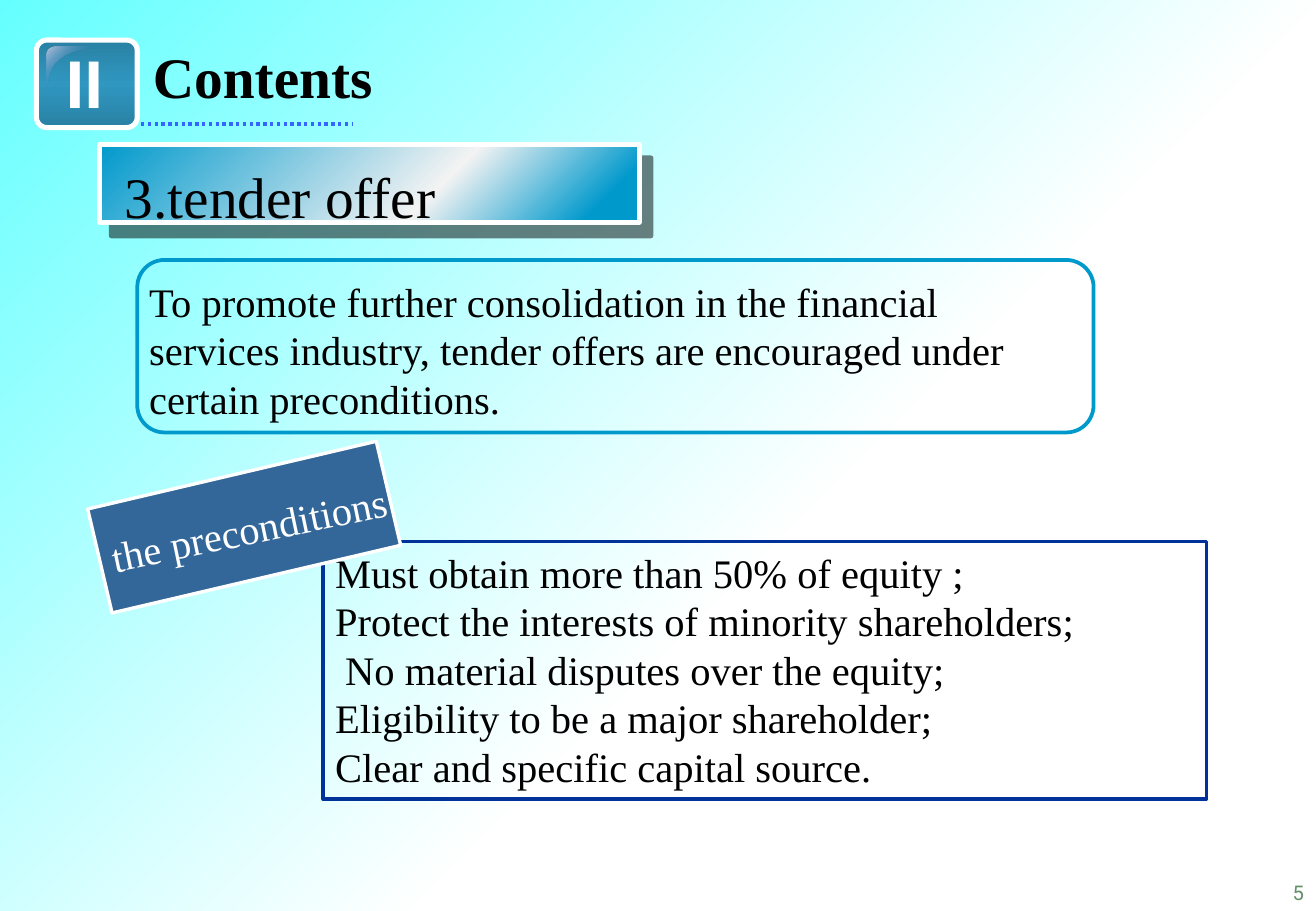
from dataclasses import dataclass
from lxml.etree import SubElement
from pptx import Presentation
from pptx.dml.color import RGBColor
from pptx.enum.dml import MSO_LINE
from pptx.enum.shapes import MSO_CONNECTOR, MSO_SHAPE
from pptx.enum.text import MSO_ANCHOR, PP_ALIGN
from pptx.oxml.ns import qn
from pptx.util import Inches, Pt


@dataclass(frozen=True)
class Theme:
    black: str = "000000"
    white: str = "FFFFFF"
    navy: str = "003399"
    slate: str = "336699"
    teal: str = "0099CC"
    blue: str = "3366FF"
    green: str = "648F67"
    serif: str = "Times New Roman"
    title: int = 34
    body: int = 24
    badge: int = 40
    small: int = 12
    sky: tuple = ((0, "66FFFF"), (60, "FFFFFF"))
    steel: tuple = ((0, "2981A4"), (50, "3097C0"), (100, "2981A4"))
    shine: tuple = ((0, "0099CC"), (62, "F3F3F3"), (91, "0099CC"))
    gloss: tuple = ((0, "BBC7DE"), (50, "4F81BD", 0), (100, "BBC7DE"))


THEME = Theme()


def set_blend(fill, root, stops, angle):
    """Fill with a linear gradient; a stop is place, colour and opacity."""
    fill.solid()
    solid = next(root.iter(qn("a:solidFill")))
    blend = solid.makeelement(qn("a:gradFill"), {"rotWithShape": "1"})
    solid.getparent().replace(solid, blend)
    items = SubElement(blend, qn("a:gsLst"))
    for place, color, *alpha in stops:
        stop = SubElement(items, qn("a:gs"), pos=str(place * 1000))
        tint = SubElement(stop, qn("a:srgbClr"), val=color)
        for level in alpha:
            SubElement(tint, qn("a:alpha"), val=str(level * 1000))
    SubElement(blend, qn("a:lin"), ang=str(angle * 60000), scaled="0")


def style_shape(shape, fill=None, angle=45, line=None, width=2):
    shape.shadow.inherit = False
    if fill is None:
        shape.fill.background()
    elif isinstance(fill, str):
        shape.fill.solid()
        shape.fill.fore_color.rgb = RGBColor.from_string(fill)
    else:
        set_blend(shape.fill, shape.element.spPr, fill, angle)
    if line:
        shape.line.color.rgb = RGBColor.from_string(line)
        shape.line.width = Pt(width)
    else:
        shape.line.fill.background()


def add_box(slide, area, round_by=None, turn=0, **style):
    kind = MSO_SHAPE.RECTANGLE if round_by is None else MSO_SHAPE.ROUNDED_RECTANGLE
    box = slide.shapes.add_shape(kind, *map(Inches, area))
    if round_by is not None:
        box.adjustments[0] = round_by
    box.rotation = turn
    style_shape(box, **style)
    return box


def add_shadow(shape, color, alpha, reach, angle):
    effect = shape.element.spPr.find(qn("a:effectLst"))
    shade = SubElement(effect, qn("a:outerShdw"), dist=str(Pt(reach)),
                       dir=str(angle * 60000), algn="ctr", rotWithShape="0")
    tint = SubElement(shade, qn("a:srgbClr"), val=color)
    SubElement(tint, qn("a:alpha"), val=str(alpha * 1000))


def set_text(shape, text, size, color=THEME.black, font=THEME.serif,
             bold=False, align=PP_ALIGN.LEFT, wrap=True, space=None):
    frame = shape.text_frame
    frame.text = text
    frame.word_wrap = wrap
    frame.vertical_anchor = MSO_ANCHOR.TOP
    for para in frame.paragraphs:
        para.alignment = align
        if space:
            para.line_spacing = space
        for run in para.runs:
            run.font.name = font
            run.font.size = Pt(size)
            run.font.bold = bold
            run.font.color.rgb = RGBColor.from_string(color)


def add_text(slide, area, text, size, turn=0, **style):
    box = slide.shapes.add_textbox(*map(Inches, area))
    box.rotation = turn
    set_text(box, text, size, **style)


def curve(start, pull, push, end, steps=8):
    """Points along a cubic curve, without its start."""
    for step in range(1, steps + 1):
        t = step / steps
        parts = ((1 - t) ** 3, 3 * t * (1 - t) ** 2, 3 * t * t * (1 - t), t ** 3)
        yield tuple(sum(part * point[axis] for part, point
                        in zip(parts, (start, pull, push, end))) for axis in (0, 1))


def add_gloss(slide):
    points = [
        *curve((0.46, 0.38), (0.41, 0.38), (0.38, 0.41), (0.38, 0.45)),
        (0.38, 0.74),
        *curve((0.38, 0.74), (0.4, 0.74), (0.38, 0.57), (0.49, 0.49)),
        *curve((0.49, 0.49), (0.59, 0.4), (0.79, 0.4), (0.79, 0.38)),
    ]
    pen = slide.shapes.build_freeform(Inches(0.46), Inches(0.38))
    pen.add_line_segments([(Inches(x), Inches(y)) for x, y in points], close=True)
    style_shape(pen.convert_to_shape(), fill=THEME.gloss)


def add_dots(slide, left, right, top):
    rule = slide.shapes.add_connector(
        MSO_CONNECTOR.STRAIGHT, *map(Inches, (left, top, right, top)))
    rule.line.color.rgb = RGBColor.from_string(THEME.blue)
    rule.line.width = Pt(2)
    rule.line.dash_style = MSO_LINE.ROUND_DOT
    SubElement(rule.element.spPr, qn("a:effectLst"))


def main():
    deck = Presentation()
    deck.slide_width, deck.slide_height = Inches(10.83), Inches(7.5)
    slide = deck.slides.add_slide(deck.slide_layouts[6])
    set_blend(slide.background.fill, slide.element, THEME.sky, 45)

    # List of terms and its tilted label
    terms = add_box(slide, (2.66, 4.46, 7.27, 2.12), line=THEME.navy)
    set_text(terms, "Must obtain more than 50% of equity ;\n"
                    "Protect the interests of minority shareholders;\n"
                    " No material disputes over the equity;\n"
                    "Eligibility to be a major shareholder;\n"
                    "Clear and specific capital source.", THEME.body)
    add_box(slide, (0.79, 3.9, 2.44, 0.88), turn=346.8,
            fill=THEME.slate, line=THEME.white)
    add_text(slide, (0.79, 4.04, 3.09, 0.5), "the preconditions", THEME.body,
             turn=348.1, color=THEME.white)

    # Topic banner
    banner = add_box(slide, (0.82, 1.19, 4.44, 0.64), round_by=0,
                     fill=THEME.shine, line=THEME.white, width=3)
    add_shadow(banner, THEME.black, 50, 10.6, 49)
    add_text(slide, (0.93, 1.01, 2.79, 0.94), "3.tender offer", THEME.title,
             wrap=False, space=Pt(60))

    # Summary
    add_box(slide, (1.13, 2.14, 7.87, 1.42), round_by=0.158,
            line=THEME.teal, width=2.25)
    add_text(slide, (1.13, 2.23, 7.8, 1.31),
             "To promote further consolidation in the financial services "
             "industry, tender offers are encouraged under certain "
             "preconditions.", THEME.body)

    # Heading with its badge
    add_box(slide, (0.3, 0.33, 0.83, 0.72), round_by=0.119,
            fill=THEME.steel, angle=90, line=THEME.white, width=3)
    add_gloss(slide)
    add_text(slide, (0.44, 0.29, 0.51, 0.77), "II", THEME.badge, bold=True,
             color=THEME.white, font="Arial", align=PP_ALIGN.CENTER, wrap=False)
    add_dots(slide, 1.16, 2.9, 1.02)
    add_text(slide, (1.16, 0.29, 2.6, 0.67), "Contents", THEME.title, bold=True)

    # Page number
    add_text(slide, (9.93, 7.2, 0.9, 0.27), "5", THEME.small,
             color=THEME.green, font="Roboto", align=PP_ALIGN.RIGHT)

    deck.save("out.pptx")


if __name__ == "__main__":
    main()
